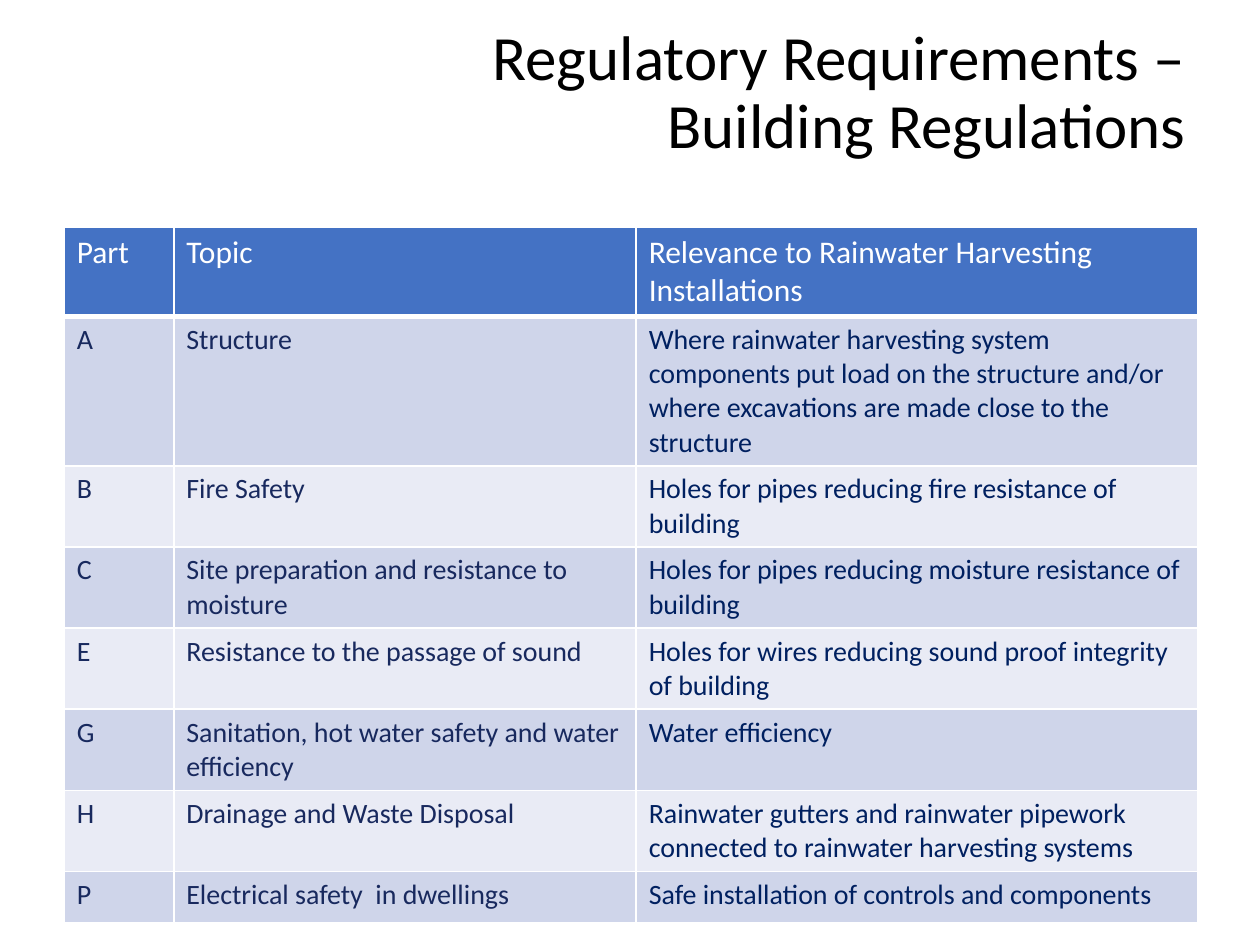
from typing import NamedTuple

from lxml import etree
from pptx import Presentation
from pptx import util as u
from pptx.dml.color import RGBColor
from pptx.enum import text
from pptx.oxml.ns import qn

FONT = "Calibri"
WHITE, BLACK = "FFFFFF", "000000"
HEADER_FILL, BAND_FILLS = "4472C4", ("CFD5EA", "E9EBF5")
TOPIC_INK, RELEVANCE_INK = "18295E", "002060"

# Slide grid: 100 columns by 75 rows
GRID_COLUMNS, GRID_ROWS = 100, 75
PART_COLUMNS = (8.7, 36.7, 44.6)
ROW_HEIGHT = 4.1


class Regulation(NamedTuple):
    part: str
    topic: str
    relevance: str


HEADINGS = Regulation("Part", "Topic", "Relevance to Rainwater Harvesting Installations")
REGULATIONS = (
    Regulation("A", "Structure",
               "Where rainwater harvesting system components put load on the structure "
               "and/or where excavations are made close to the structure"),
    Regulation("B", "Fire Safety", "Holes for pipes reducing fire resistance of building"),
    Regulation("C", "Site preparation and resistance to moisture",
               "Holes for pipes reducing moisture resistance of building"),
    Regulation("E", "Resistance to the passage of sound",
               "Holes for wires reducing sound proof integrity of building"),
    Regulation("G", "Sanitation, hot water safety and water efficiency", "Water efficiency"),
    Regulation("H", "Drainage and Waste Disposal",
               "Rainwater gutters and rainwater pipework connected to rainwater harvesting systems"),
    Regulation("P", "Electrical safety  in dwellings",
               "Safe installation of controls and components"),
)


def colour(value: str) -> RGBColor:
    return RGBColor.from_string(value)


def style_font(paragraph, size: int, ink: str) -> None:
    font = paragraph.font
    font.name, font.size, font.bold = FONT, u.Pt(size), False
    font.color.rgb = colour(ink)


def add_border(cell, side: str, width: float) -> None:
    line = etree.Element(qn(f"a:ln{side}"), w=str(u.Pt(width)))
    fill = etree.SubElement(line, qn("a:solidFill"))
    etree.SubElement(fill, qn("a:srgbClr"), val=WHITE)
    # Border lines come before the fill
    properties = cell._tc.get_or_add_tcPr()
    properties.insert(len(properties.findall("*")) - 1, line)


def fill_cell(cell, wording: str, size: int, ink: str, fill: str) -> None:
    cell.text = wording
    style_font(cell.text_frame.paragraphs[0], size, ink)
    cell.fill.solid()
    cell.fill.fore_color.rgb = colour(fill)


def main() -> None:
    deck = Presentation()
    deck.slide_width, deck.slide_height = u.Inches(10), u.Inches(7.5)
    column = deck.slide_width / GRID_COLUMNS
    row = deck.slide_height / GRID_ROWS
    slide = deck.slides.add_slide(deck.slide_layouts[5])

    # Title
    title = slide.shapes.title
    title.left, title.top = int(25.6 * column), int(2.1 * row)
    title.width, title.height = int(69.5 * column), int(10.8 * row)
    frame = title.text_frame
    frame.text = "Regulatory Requirements –\vBuilding Regulations"
    frame.word_wrap = True
    frame.auto_size = text.MSO_AUTO_SIZE.NONE
    frame.vertical_anchor = text.MSO_ANCHOR.MIDDLE
    heading = frame.paragraphs[0]
    heading.alignment = text.PP_ALIGN.RIGHT
    heading.line_spacing = 0.9
    style_font(heading, 36, BLACK)

    # Table of regulations
    row_count = len(REGULATIONS) + 1
    table = slide.shapes.add_table(
        row_count, len(PART_COLUMNS), int(5.1 * column), int(18 * row),
        int(sum(PART_COLUMNS) * column), int(row_count * ROW_HEIGHT * row)).table
    for table_column, span in zip(table.columns, PART_COLUMNS):
        table_column.width = int(span * column)
    for table_row in table.rows:
        table_row.height = int(ROW_HEIGHT * row)

    # Header row
    for cell, wording in zip(table.rows[0].cells, HEADINGS):
        fill_cell(cell, wording, 18, WHITE, HEADER_FILL)
        for side, width in (("L", 1), ("R", 1), ("T", 1), ("B", 3)):
            add_border(cell, side, width)

    # Banded body rows
    inks = Regulation(TOPIC_INK, TOPIC_INK, RELEVANCE_INK)
    for index, regulation in enumerate(REGULATIONS):
        band = BAND_FILLS[index % 2]
        for cell, wording, ink in zip(table.rows[index + 1].cells, regulation, inks):
            fill_cell(cell, wording, 16, ink, band)

    deck.save("out.pptx")


if __name__ == "__main__":
    main()
